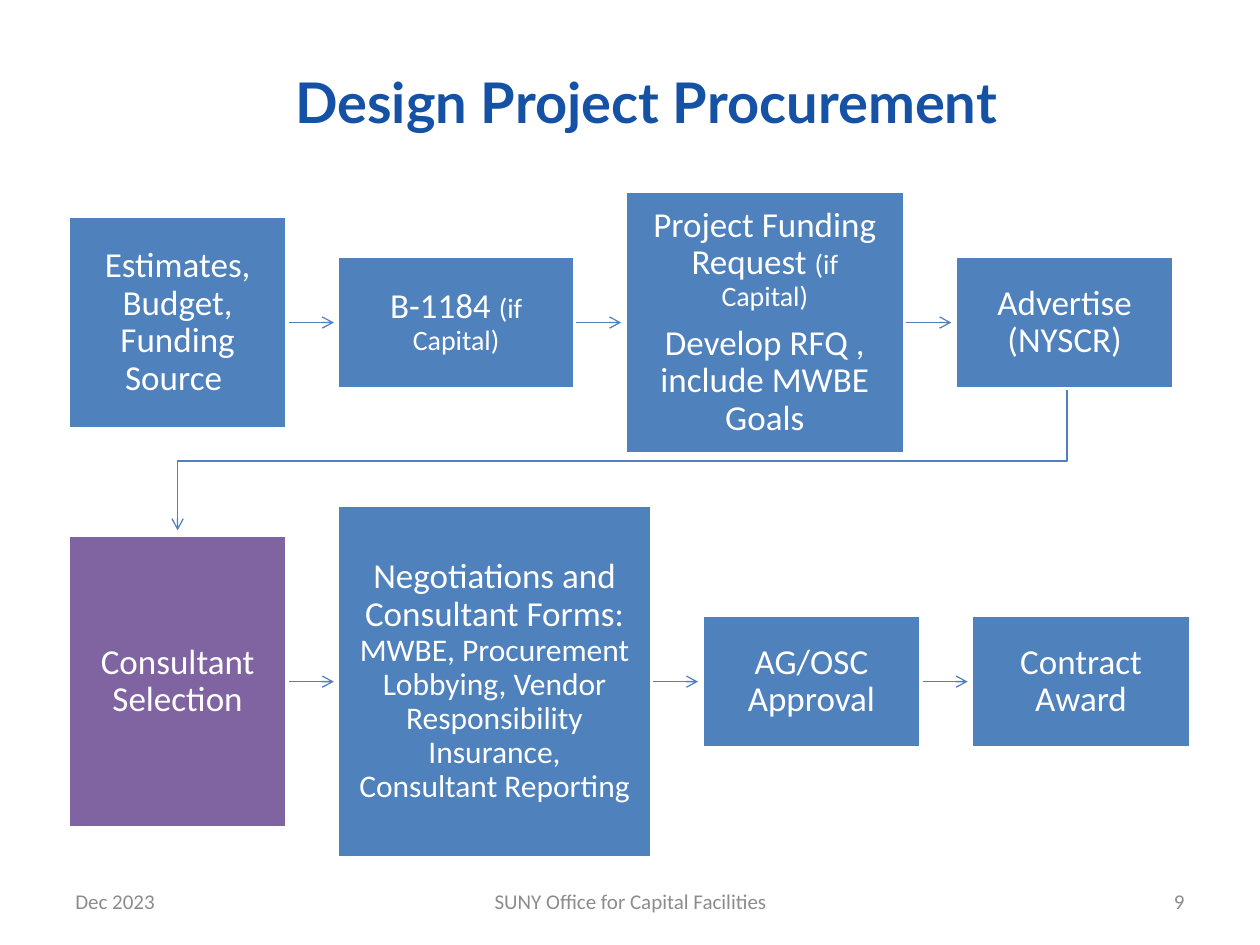
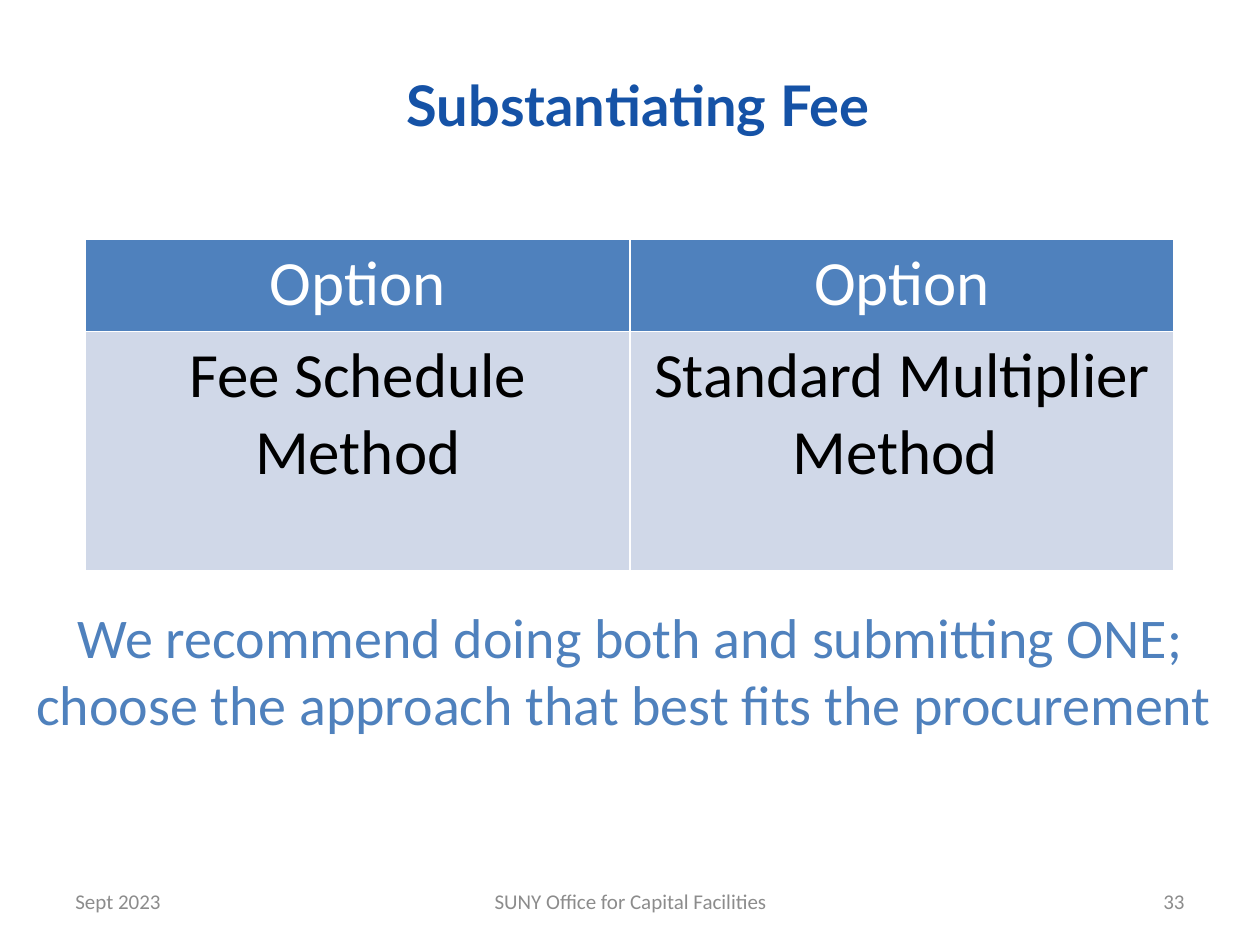
from lxml.etree import SubElement
from pptx import Presentation
from pptx.dml.color import RGBColor
from pptx.enum.shapes import MSO_CONNECTOR, MSO_SHAPE
from pptx.enum.text import MSO_ANCHOR, PP_ALIGN
from pptx.oxml.ns import qn
from pptx.util import Inches, Pt

COLORS = {
    "title": "1552A6",
    "blue": "4F81BD",
    "purple": "8064A2",
    "pale": "D0D8E8",
    "gray": "8C8C8C",
    "white": "FFFFFF",
    "black": "000000",
}
BODY_FONT = "Calibri"
TITLE_FONT = "Lato"
FOOTER = "SUNY Office for Capital Facilities"
LEFT, GAP, ARROW = 0.54, 0.4, 0.37

TOP_ROW = [
    (1.74, 1.69, "blue", [[("Estimates, Budget, Funding Source ", 20)]]),
    (1.88, 1.05, "blue", [[("B-1184 ", 20), ("(if Capital)", 16)]]),
    (2.22, 2.09, "blue", [
        [("Project Funding Request ", 20), ("(if Capital)", 16)],
        [("Develop RFQ , include MWBE Goals", 20)],
    ]),
    (1.74, 1.05, "blue", [[("Advertise (NYSCR)", 20)]]),
]
BOTTOM_ROW = [
    (1.74, 2.32, "purple", [[("Consultant Selection", 20)]]),
    (2.49, 2.8, "blue", [[
        ("Negotiations and Consultant Forms: ", 20),
        ("MWBE, Procurement Lobbying, Vendor Responsibility Insurance, "
         "Consultant Reporting", 18),
    ]]),
    (1.74, 1.05, "blue", [[("AG/OSC Approval", 20)]]),
    (1.74, 1.05, "blue", [[("Contract Award", 20)]]),
]


def rgb(name):
    """Return the named colour."""
    return RGBColor.from_string(COLORS[name])


def style(p, size, color, align=PP_ALIGN.CENTER, font=BODY_FONT, bold=False):
    """Format a whole paragraph."""
    p.alignment = align
    p.font.name = font
    p.font.size = Pt(size)
    p.font.bold = bold
    p.font.color.rgb = rgb(color)


def add_text(slide, box, text, size, color, align, anchor):
    """Add a wrapped one-paragraph text box."""
    tf = slide.shapes.add_textbox(*map(Inches, box)).text_frame
    tf.word_wrap = True
    tf.vertical_anchor = anchor
    p = tf.paragraphs[0]
    p.text = text
    style(p, size, color, align)


def add_page(prs, title, box, date, number):
    """Add a title-only slide with its title and footer."""
    slide = prs.slides.add_slide(prs.slide_layouts[5])
    sp = slide.shapes.title
    sp.left, sp.top, sp.width, sp.height = map(Inches, box)
    sp.text_frame.text = title
    sp.text_frame.vertical_anchor = MSO_ANCHOR.MIDDLE
    style(sp.text_frame.paragraphs[0], 32, "title", font=TITLE_FONT, bold=True)
    for left, width, text, align in (
        (0.5, 2.33, date, PP_ALIGN.LEFT),
        (3.42, 3.17, FOOTER, PP_ALIGN.CENTER),
        (7.17, 2.33, number, PP_ALIGN.RIGHT),
    ):
        add_text(slide, (left, 6.95, width, 0.4), text, 12, "gray", align,
                 MSO_ANCHOR.MIDDLE)
    return slide


def style_arrow(line):
    """Give a line its colour, width and open arrowhead."""
    line.line.color.rgb = rgb("blue")
    line.line.width = Pt(0.75)
    SubElement(line.element.spPr.get_or_add_ln(), qn("a:tailEnd"), type="arrow")


def add_arrow(slide, x, y):
    """Add a short arrow pointing right."""
    line = slide.shapes.add_connector(
        MSO_CONNECTOR.STRAIGHT, Inches(x), Inches(y), Inches(x + ARROW), Inches(y))
    style_arrow(line)
    SubElement(line.element.spPr, qn("a:effectLst"))


def add_bent_arrow(slide, points):
    """Add an arrow running through the given points."""
    start, *rest = [(Inches(x), Inches(y)) for x, y in points]
    builder = slide.shapes.build_freeform(*start)
    builder.add_line_segments(rest, close=False)
    sp = builder.convert_to_shape()
    sp.fill.background()
    sp.shadow.inherit = False
    style_arrow(sp)


def add_step(slide, box, fill, paragraphs):
    """Add a process box holding paragraphs of sized runs."""
    sp = slide.shapes.add_shape(MSO_SHAPE.RECTANGLE, *map(Inches, box))
    sp.shadow.inherit = False
    sp.fill.solid()
    sp.fill.fore_color.rgb = rgb(fill)
    sp.line.color.rgb = rgb("white")
    sp.line.width = Pt(2)
    tf = sp.text_frame
    tf.word_wrap = True
    tf.vertical_anchor = MSO_ANCHOR.MIDDLE
    tf.margin_left = tf.margin_right = Inches(0.16)
    tf.margin_top = tf.margin_bottom = Inches(0.16)
    for i, runs in enumerate(paragraphs):
        p = tf.add_paragraph() if i else tf.paragraphs[0]
        style(p, 20, "white")
        p.line_spacing = 0.9
        p.space_after = Pt(7)
        for text, size in runs:
            r = p.add_run()
            r.text = text
            r.font.size = Pt(size)


def add_row(slide, steps, middle):
    """Add a row of steps joined by arrows, centred on one height."""
    x = LEFT
    for i, (width, height, fill, paragraphs) in enumerate(steps):
        if i < len(steps) - 1:
            add_arrow(slide, x + width, middle)
        add_step(slide, (x, middle - height / 2, width, height), fill, paragraphs)
        x += width + GAP


def add_options(slide, rows):
    """Add the table of fee options."""
    frame = slide.shapes.add_table(
        len(rows), len(rows[0][0]), Inches(0.68), Inches(1.9), Inches(8.64), Inches(2.63))
    table = frame.table
    for i, (texts, height, fill, color) in enumerate(rows):
        table.rows[i].height = Inches(height)
        for cell, text in zip(table.rows[i].cells, texts):
            cell.text = text
            cell.fill.solid()
            cell.fill.fore_color.rgb = rgb(fill)
            style(cell.text_frame.paragraphs[0], 36, color)


def main():
    """Build and save both slides."""
    prs = Presentation()
    prs.slide_width, prs.slide_height = Inches(10), Inches(7.5)

    slide = add_page(prs, "Design Project Procurement", (0.63, 0.18, 9, 1.25),
                     "Dec 2023", "9")
    add_bent_arrow(slide, [(8.47, 3.08), (8.47, 3.66), (1.41, 3.66), (1.41, 4.21)])
    add_row(slide, TOP_ROW, 2.56)
    add_row(slide, BOTTOM_ROW, 5.41)

    slide = add_page(prs, "Substantiating Fee", (0.63, 0.2, 8.87, 1.25),
                     "Sept 2023", "33")
    add_options(slide, [
        (("Option", "Option"), 0.73, "blue", "white"),
        (("Fee Schedule Method", "Standard Multiplier Method "), 1.9, "pale", "black"),
    ])
    add_text(slide, (0.13, 4.73, 9.75, 1.18),
             "We recommend doing both and submitting ONE; "
             "choose the approach that best fits the procurement ",
             32, "blue", PP_ALIGN.CENTER, MSO_ANCHOR.TOP)

    prs.save("out.pptx")


if __name__ == "__main__":
    main()
